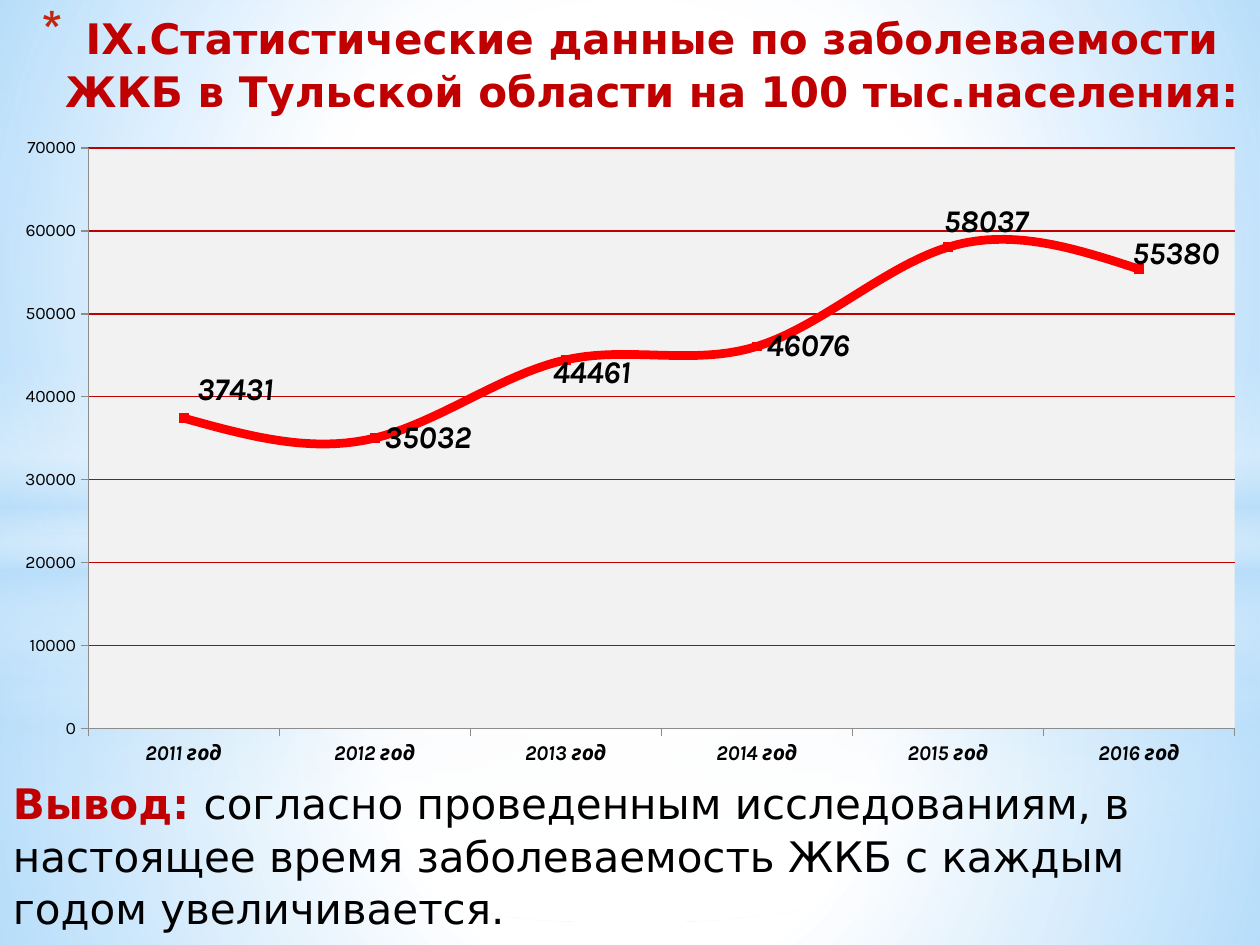
"""Build the slide on gallstone disease statistics in Tula region."""
from lxml import etree
from pptx import Presentation
from pptx.chart.data import CategoryChartData
from pptx.dml.color import RGBColor
from pptx.enum.chart import XL_CHART_TYPE as ChartType, XL_LABEL_POSITION as LabelPosition
from pptx.enum.chart import XL_MARKER_STYLE as MarkerStyle, XL_TICK_MARK as TickMark
from pptx.enum.shapes import MSO_SHAPE as ShapeType
from pptx.enum.text import MSO_ANCHOR as Anchor, PP_ALIGN as Align
from pptx.oxml import parse_xml
from pptx.oxml.ns import nsdecls, qn
from pptx.util import Pt

PX = 7257
COLORS = {"white": "FFFFFF", "sky": "B4DCFA", "heading": "C00000", "bullet": "C3260C",
          "text": "000000", "curve": "FF0000", "plot": "F2F2F2", "axis": "8C8C8C"}


def apply_format(target, values):
    for name, value in values.items():
        if name == "color":
            target.color.rgb = RGBColor.from_string(COLORS[value])
        else:
            setattr(target, name, value)


def add_box(left, top, width, height, margin_top, anchor):
    box = slide.shapes.add_textbox(left * PX, top * PX, width * PX, height * PX)
    apply_format(box.text_frame, {"word_wrap": True, "vertical_anchor": anchor,
                                  "margin_left": 13 * PX, "margin_right": 13 * PX,
                                  "margin_top": margin_top * PX, "margin_bottom": 6 * PX})
    return box.text_frame.paragraphs[0]


presentation = Presentation()
presentation.slide_width, presentation.slide_height = 1260 * PX, 945 * PX
slide = presentation.slides.add_slide(presentation.slide_layouts[6])

CIRCLE = ('<a:path path="circle"><a:fillToRect l="50000" t="50000" r="50000" b="50000"/>'
          '</a:path>')
LINEAR = '<a:lin ang="5400000" scaled="0"/>'
BAND = [(0, "white", 0), (29, "white", 30), (45, "sky", 40),
        (55, "white", 26), (65, "sky", 60), (100, "white", 0)]
backdrop = []
for split, band_top, extra, glow_end in [(703, 519, 0, 56), (533, 365, 1, 54)]:
    backdrop += [
        (ShapeType.RECTANGLE, split, 945 - split, CIRCLE,
         [(0, "white", 91 + extra), (37, "white", 76 + extra), (100, "sky", 79 + extra)]),
        (ShapeType.RECTANGLE, 0, split, CIRCLE,
         [(0, "white", 89 + extra), (48, "white", 62 + extra), (100, "sky", 79 + extra)]),
        (ShapeType.RECTANGLE, band_top, 315, LINEAR, BAND),
        (ShapeType.OVAL, 220, 703, CIRCLE, [(0, "white", 100), (glow_end, "white", 0)]),
    ]
for kind, top, height, direction, stops in backdrop:
    shape = slide.shapes.add_shape(kind, 0, top * PX, 1260 * PX, height * PX)
    shape.shadow.inherit = False
    shape.line.fill.background()
    stop_xml = "".join(
        f'<a:gs pos="{position * 1000}"><a:srgbClr val="{COLORS[color]}">'
        f'<a:alpha val="{alpha * 1000}"/></a:srgbClr></a:gs>'
        for position, color, alpha in stops)
    shape.element.spPr.find(qn("a:prstGeom")).addnext(parse_xml(
        f'<a:gradFill {nsdecls("a")} rotWithShape="1"><a:gsLst>{stop_xml}</a:gsLst>'
        f'{direction}</a:gradFill>'))

TEXT = {"size": Pt(24), "name": "DejaVu Sans", "bold": False, "color": "text"}
HEADING = {**TEXT, "bold": True, "color": "heading"}
title = add_box(0, -24, 1260, 238, 35, Anchor.TOP)
apply_format(title, {"alignment": Align.CENTER, "line_spacing": 1.04})
properties = title._p.get_or_add_pPr()
properties.set("marL", str(44 * PX))
properties.set("indent", str(-44 * PX))
bullet_color = etree.SubElement(properties, qn("a:buClr"))
etree.SubElement(bullet_color, qn("a:srgbClr"), val=COLORS["bullet"])
etree.SubElement(properties, qn("a:buSzPct"), val="128000")
etree.SubElement(properties, qn("a:buChar"), char="*")
conclusion = add_box(0, 770, 1260, 139, 6, Anchor.TOP)
conclusion.line_spacing = 1.04
for paragraph, wording, values in [
    (title, "IX.Статистические данные по заболеваемости ЖКБ в Тульской области "
            "на 100 тыс.населения:", HEADING),
    (conclusion, "Вывод: ", HEADING),
    (conclusion, "согласно проведенным исследованиям, в настоящее время заболеваемость "
                 "ЖКБ с каждым годом увеличивается.", TEXT),
]:
    run = paragraph.add_run()
    run.text = wording
    apply_format(run.font, values)

data = CategoryChartData()
data.categories = [f"{year} год" for year in range(2011, 2017)]
data.add_series("Series 1", [37431, 35032, 44461, 46076, 58037, 55380])
chart = slide.shapes.add_chart(ChartType.LINE_MARKERS_STACKED, 0, 125 * PX,
                               1260 * PX, 655 * PX, data).chart
apply_format(chart, {"has_legend": False, "has_title": False})
apply_format(chart.font, {"size": Pt(10), "name": "Karla", "color": "text"})
apply_format(chart.category_axis.tick_labels.font,
             {"size": Pt(12), "bold": True, "italic": True})
apply_format(chart.value_axis, {"minimum_scale": 0, "maximum_scale": 70000,
                                "major_unit": 10000, "has_major_gridlines": True})
apply_format(chart.value_axis.major_gridlines.format.line,
             {"color": "heading", "width": Pt(0.75)})
for axis in (chart.category_axis, chart.value_axis):
    axis.major_tick_mark = TickMark.OUTSIDE
    apply_format(axis.format.line, {"color": "axis", "width": Pt(0.75)})

plot_area = chart._chartSpace.chart.plotArea
for layout in plot_area.findall(qn("c:layout")):
    plot_area.remove(layout)
plot_area.insert(0, parse_xml(
    f'<c:layout {nsdecls("c")}><c:manualLayout><c:layoutTarget val="inner"/>'
    '<c:xMode val="edge"/><c:yMode val="edge"/><c:x val="0.07"/><c:y val="0.035"/>'
    '<c:w val="0.91"/><c:h val="0.887"/></c:manualLayout></c:layout>'))
plot_area.append(parse_xml(
    f'<c:spPr {nsdecls("c", "a")}><a:solidFill><a:srgbClr val="{COLORS["plot"]}"/>'
    '</a:solidFill></c:spPr>'))

plot = chart.plots[0]
plot.vary_by_categories = False
series = plot.series[0]
series.smooth = True
apply_format(series.format.line, {"color": "curve", "width": Pt(5)})
apply_format(series.marker, {"style": MarkerStyle.SQUARE, "size": 5})
series.marker.format.fill.solid()
series.marker.format.fill.fore_color.rgb = RGBColor.from_string(COLORS["curve"])
series.marker.format.line.fill.background()

LABEL = {"size": Pt(18), "name": "Karla", "bold": True, "italic": True, "color": "text"}
labels = series.data_labels
apply_format(labels, {"show_value": True, "position": LabelPosition.RIGHT})
apply_format(labels.font, LABEL)
for index, (shift_x, shift_y) in {0: (4, -28), 2: (-23, 13), 4: (-14, -25),
                                  5: (-17, -15)}.items():
    label = series.points[index].data_label
    apply_format(label.font, LABEL)
    label.position = LabelPosition.RIGHT
    label_xml = labels._element.find(f'{qn("c:dLbl")}[{qn("c:idx")}][@val]')
    label_xml = [item for item in labels._element.findall(qn("c:dLbl"))
                 if item.find(qn("c:idx")).get("val") == str(index)][0]
    label_xml.find(qn("c:idx")).addnext(parse_xml(
        f'<c:layout {nsdecls("c")}><c:manualLayout><c:x val="{shift_x / 1260:.3f}"/>'
        f'<c:y val="{shift_y / 655:.3f}"/></c:manualLayout></c:layout>'))

presentation.save("out.pptx")
